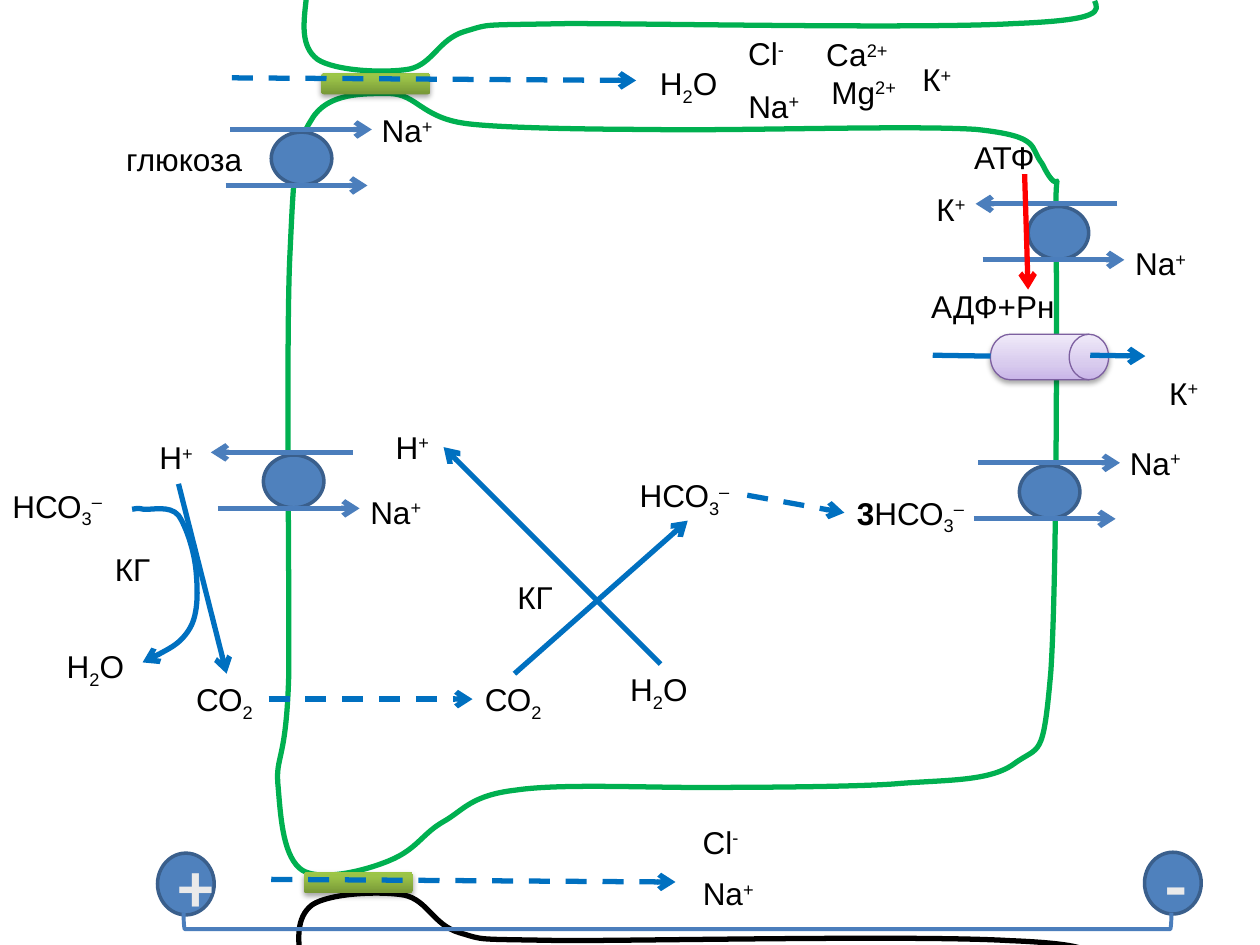
from dataclasses import dataclass
from typing import NamedTuple
from lxml import etree
from pptx import Presentation
from pptx.dml import color
from pptx.enum import dml, shapes, text
from pptx.oxml import ns
from pptx.util import Pt

BLUE, STEEL, STEEL_EDGE, STEEL_LINE = "0070C0", "4F81BD", "3A5F8C", "4B7EBC"
GREEN, RED, BLACK, PALE, VIOLET = "00B050", "FF0000", "000000", "EAEAEA", "7D60A0"
JUNCTION_STOPS = ((0, "779737"), (80, "9BC348"), (100, "9DC746"))
CHANNEL_STOPS = ((0, "C9B5E8"), (35, "D8CBEE"), (100, "F0EAF9"))
SHAPE = shapes.MSO_SHAPE

class Run(NamedTuple):
    text: str
    shift: int = 0  # percent above or below the baseline
    bold: bool = False

class Formula(NamedTuple):
    width: float
    runs: tuple[Run, ...]
    spots: tuple[tuple[float, float], ...]

@dataclass
class Arrow:
    start: tuple[float, float]
    end: tuple[float, float]
    colour: str = BLUE
    dashed: bool = False
    head: bool = True

class Carrier(NamedTuple):
    x: float
    y: float
    antiport: bool

PLUS, TWO = Run("+", 30), Run("2", -25)
BICARBONATE = (Run("НСО"), Run("3", -25), Run("–", 30))
FORMULAS = (
    Formula(44.6, (Run("Na"), PLUS), ((641.5, 136), (211, 60), (420.5, 46), (204.5, 278),
                                      (394.5, 496), (638.5, 250))),
    Formula(32.4, (Run("К"), PLUS), ((528, 105), (661, 210), (520, 31))),
    Formula(34.6, (Run("Н"), PLUS), ((84, 247), (219, 241))),
    Formula(36, (Run("Cl"), Run("-", 30)), ((420.5, 16), (394.5, 466.5))),
    Formula(48, (Run("H"), TWO, Run("O")), ((370, 33),)),
    Formula(48, (Run("Н"), TWO, Run("О")), ((31, 366), (353, 379.5))),
    Formula(48, (Run("СО"), TWO), ((105, 385), (270, 385))),
    Formula(67.7, BICARBONATE, ((0, 274.5), (358.5, 268.5))),
    Formula(77.8, (Run("3", bold=True), *BICARBONATE), ((482.5, 278.5),)),
    Formula(35.3, (Run("КГ"),), ((58.5, 311), (288.5, 327))),
    Formula(49.7, (Run("АТФ"),), ((549.5, 75.5),)),
    Formula(85.7, (Run("АДФ+Рн"),), ((525, 160.5),)),
    Formula(81, (Run("глюкоза"),), ((65, 76.5),)),
)
# Outlines: a start point, then three points for each cubic curve
CELL = (
    (165, 386.5), (165.5, 337), (163.5, 203), (165.5, 150), (168, 97), (168, 84), (178, 68.5),
    (187, 52.5), (209, 53.5), (223, 53.5), (238, 54), (241, 67), (265.5, 70.5),
    (290, 74), (370, 74), (370, 74), (419, 75), (520.5, 71.5), (558, 74),
    (595.5, 78), (588, 84), (595.5, 93.5), (608.5, 120), (602.5, 81.5), (603.5, 129.5),
    (604, 178), (604, 332.5), (600.5, 384), (596, 435), (594.5, 425.5), (579.5, 436.5),
    (565, 447), (539, 445.5), (511, 448), (483, 450), (411, 450), (411, 450),
    (375, 450.5), (322, 447.5), (295, 451.5), (269, 454.5), (265, 463), (253.5, 469.5),
    (242, 476), (239, 484), (225.5, 490.5), (211.5, 497), (184.5, 504), (173, 497.5),
    (162, 490.5), (160.5, 468.5), (159, 450), (157, 431.5), (163.5, 437), (165, 386.5))
UPPER_CELL = (
    (175, -0.5), (173.5, 13), (171.5, 26.5), (181.5, 34), (191.5, 40.5), (219.5, 42), (234, 39.5),
    (247.5, 36.5), (250.5, 22.5), (265.5, 18), (281, 13.5), (272, 14.5), (324.5, 13.5),
    (376.5, 13.5), (529, 16.5), (579.5, 13.5), (630, 11.5), (628, 6.5), (625.5, 0.5))
LOWER_CELL = tuple((x - 3, 551 - y) for x, y in UPPER_CELL)
WATER_RELEASE = (
    (75.5, 291), (77, 291), (78, 290), (82, 291), (86.5, 291.5), (97, 288.5), (102, 294.5),
    (106.5, 301), (111, 315), (112, 326), (113, 337), (113.5, 350.5), (108.5, 359),
    (103.5, 367.5), (92, 373.5), (81.5, 378.5))
CARRIERS = (Carrier(587.5, 118, True), Carrier(155, 75.5, False),
            Carrier(150.5, 260, True), Carrier(582.5, 266, False))
ARROWS = (
    Arrow((585.5, 99.5), (587.5, 165.5), RED),
    Arrow((623, 203), (654.5, 203.5)),
    Arrow((533, 203), (566, 203.5), head=False),
    Arrow((132.5, 44.5), (363.5, 46), dashed=True),
    Arrow((155, 502.5), (386, 504), dashed=True),
    Arrow((102, 276.5), (129.5, 385)),
    Arrow((427, 283), (482.5, 293), dashed=True),
    Arrow((294, 385), (393, 297.5)),
    Arrow((377.5, 379.5), (253.5, 255.5)),
    Arrow((153.5, 399.5), (270, 399.5), dashed=True),
)

def rgb(value: str) -> color.RGBColor:
    return color.RGBColor.from_string(value)

def add_node(parent, tag: str, **attrs):
    return etree.SubElement(parent, ns.qn(tag), {k: str(v) for k, v in attrs.items()})

def set_line(line, colour: str, width: float) -> None:
    line.color.rgb = rgb(colour)
    line.width = Pt(width)

def add_head(line) -> None:
    add_node(line._get_or_add_ln(), "a:tailEnd", type="arrow")

def add_preset(tree, kind, x: float, y: float, w: float, h: float):
    sp = tree.add_shape(kind, Pt(x), Pt(y), Pt(w), Pt(h))
    sp.shadow.inherit = False
    sp.fill.background()
    return sp

def add_ball(tree, x: float, y: float, w: float, h: float):
    sp = add_preset(tree, SHAPE.OVAL, x, y, w, h)
    sp.fill.solid()
    sp.fill.fore_color.rgb = rgb(STEEL)
    set_line(sp.line, STEEL_EDGE, 2)
    return sp

def add_glossy(tree, kind, x: float, y: float, w: float, h: float, stops):
    """Add a shape with an upward gradient and a soft shadow below it."""
    sp = add_preset(tree, kind, x, y, w, h)
    sp.fill.gradient()
    sp.fill.gradient_angle = 90
    stop_list = sp.element.spPr.find(".//" + ns.qn("a:gsLst"))
    stop_list[:] = []
    for position, colour in stops:
        add_node(add_node(stop_list, "a:gs", pos=position * 1000), "a:srgbClr", val=colour)
    shadow = add_node(sp.element.spPr.find(ns.qn("a:effectLst")), "a:outerShdw",
                      blurRad=Pt(3.1), dist=Pt(1.7), dir=5400000, rotWithShape=0)
    add_node(add_node(shadow, "a:srgbClr", val=BLACK), "a:alpha", val=35000)
    return sp

def add_curve(tree, points, colour: str, closed: bool = False):
    """Draw cubic curves, turning each three straight segments into one."""
    start, *rest = [(Pt(x), Pt(y)) for x, y in points]
    builder = tree.build_freeform(*start)
    builder.add_line_segments(rest, close=closed)
    sp = builder.convert_to_shape()
    segments = list(sp.element.iter(ns.qn("a:lnTo")))
    for i in range(0, len(segments), 3):
        cubic = etree.Element(ns.qn("a:cubicBezTo"))
        segments[i].addprevious(cubic)
        for segment in segments[i:i + 3]:
            cubic.append(segment[0])
            segment.getparent().remove(segment)
    sp.shadow.inherit = False
    sp.fill.background()
    set_line(sp.line, colour, 3)
    return sp

def add_arrow(tree, arrow: Arrow) -> None:
    points = (Pt(v) for v in (*arrow.start, *arrow.end))
    cxn = tree.add_connector(shapes.MSO_CONNECTOR.STRAIGHT, *points)
    set_line(cxn.line, arrow.colour, 3)
    if arrow.dashed:
        cxn.line.dash_style = dml.MSO_LINE.DASH
    if arrow.head:
        add_head(cxn.line)
    add_node(cxn._element.spPr, "a:effectLst")

def add_carrier(tree, c: Carrier) -> None:
    group = tree.add_group_shape().shapes
    add_ball(group, c.x, c.y, 34.6, 30.2)
    top = (51, -30) if c.antiport else (-23.5, 57.5)
    for (x1, x2), dy in ((top, -1.5), ((-26, 55), 30.5)):
        add_arrow(group, Arrow((c.x + x1, c.y + dy), (c.x + x2, c.y + dy), STEEL_LINE))

def add_run(p, run: Run, size: float = 18, font: str = "Arial", colour: str = BLACK) -> None:
    r = p.add_run()
    r.text = run.text
    r.font.size, r.font.name, r.font.bold = Pt(size), font, run.bold
    r.font.color.rgb = rgb(colour)
    if run.shift:
        r._r.get_or_add_rPr().set("baseline", str(run.shift * 1000))

def add_text(tree, x: float, y: float, w: float, h: float, *lines, wrap: bool = False):
    tf = tree.add_textbox(Pt(x), Pt(y), Pt(w), Pt(h)).text_frame
    tf.word_wrap = wrap
    tf.auto_size = text.MSO_AUTO_SIZE.SHAPE_TO_FIT_TEXT
    for i, runs in enumerate(lines):
        p = tf.add_paragraph() if i else tf.paragraphs[0]
        for run in runs:
            add_run(p, run)
    return tf

def add_electrode(tree, x: float, y: float, sign: str) -> None:
    tf = add_ball(tree, x, y, 32.4, 35.3).text_frame
    tf.vertical_anchor = text.MSO_ANCHOR.MIDDLE
    tf.paragraphs[0].alignment = text.PP_ALIGN.CENTER
    add_run(tf.paragraphs[0], Run(sign, bold=True), 40, "Calibri", PALE)

def main() -> None:
    prs = Presentation()
    prs.slide_width, prs.slide_height = Pt(720), Pt(540)
    tree = prs.slides.add_slide(prs.slide_layouts[6]).shapes
    add_curve(tree, CELL, GREEN, closed=True)
    add_curve(tree, UPPER_CELL, GREEN)
    add_curve(tree, LOWER_CELL, BLACK)
    for x, y in ((183.5, 42), (173.5, 498.5)):
        junction = add_glossy(tree, SHAPE.ROUNDED_RECTANGLE, x, y, 62.6, 12, JUNCTION_STOPS)
        junction.line.fill.background()
    for carrier in CARRIERS:
        add_carrier(tree, carrier)
    drum = SHAPE.FLOWCHART_DIRECT_ACCESS_STORAGE
    set_line(add_glossy(tree, drum, 566, 191, 67.5, 26, CHANNEL_STOPS).line, VIOLET, 0.75)
    add_electrode(tree, 90, 487.5, "+")
    add_electrode(tree, 654, 487, "-")
    circuit = add_preset(tree, SHAPE.LEFT_BRACKET, 382.5, 244, 9.4, 564.5)
    circuit.rotation = 270
    set_line(circuit.line, STEEL_LINE, 2.25)
    for arrow in ARROWS:
        add_arrow(tree, arrow)
    add_head(add_curve(tree, WATER_RELEASE, BLUE).line)
    for formula in FORMULAS:
        for x, y in formula.spots:
            add_text(tree, x, y, formula.width, 28.8, formula.runs)
    calcium, magnesium = ((Run(name), Run("2+", 30)) for name in ("Са", "Mg"))
    ions = add_text(tree, 465, 16.5, 79, 51, calcium, magnesium, wrap=True)
    ions.paragraphs[1]._p.get_or_add_pPr().set("marL", str(Pt(3)))
    prs.save("out.pptx")

if __name__ == "__main__":
    main()
